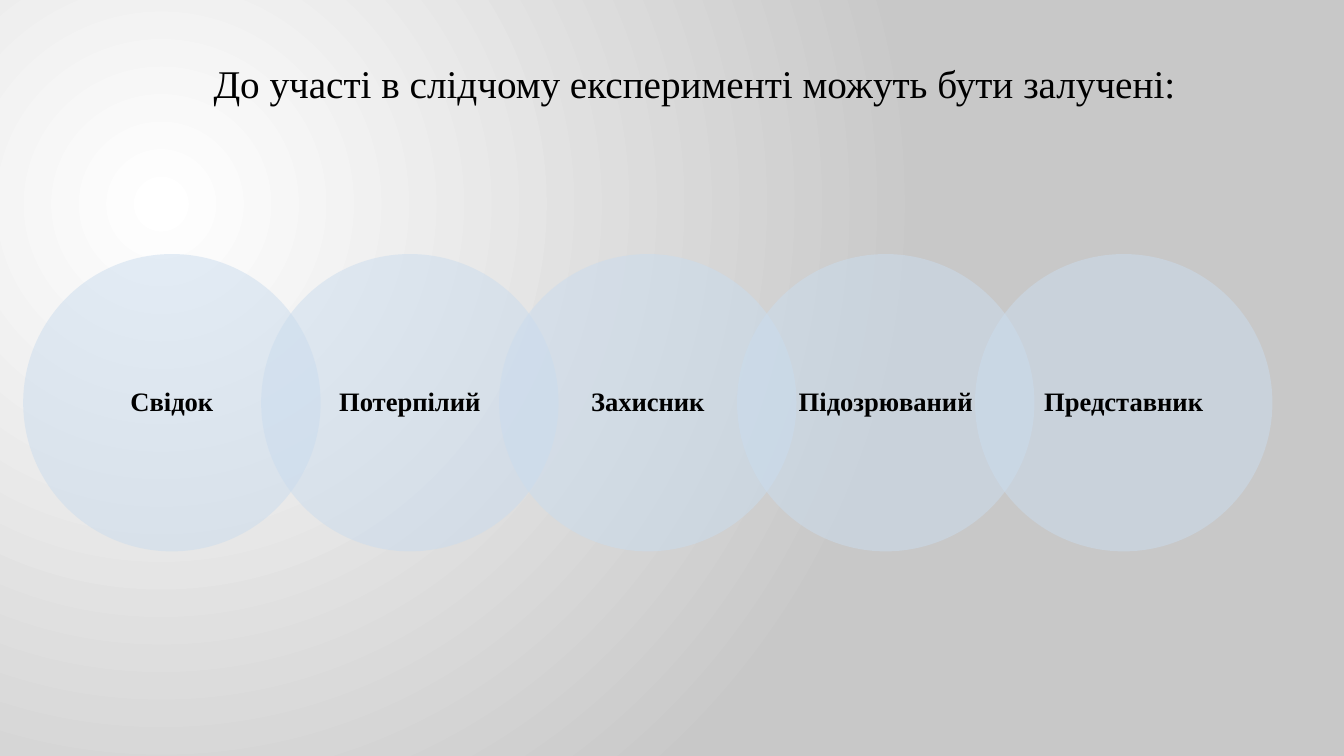
from lxml import etree
from pptx import Presentation
from pptx.dml.color import RGBColor
from pptx.enum import shapes, text
from pptx.oxml import ns
from pptx.util import Inches, Pt

BLACK = RGBColor(0x00, 0x00, 0x00)
WHITE = RGBColor(0xFF, 0xFF, 0xFF)
GREY = RGBColor(0xC8, 0xC8, 0xC8)
PALE_BLUE = RGBColor(0xCA, 0xDC, 0xEE)
FONT = "Times New Roman"

TITLE = "До участі в слідчому експерименті можуть бути залучені:"
PARTICIPANTS = ["Свідок", "Потерпілий", "Захисник", "Підозрюваний", "Представник"]
DIAMETER = 2.95
STEP = 0.8 * DIAMETER  # neighbours overlap by a fifth
FIRST_LEFT, CIRCLE_TOP = 0.23, 2.52


def set_radial_background(page, centre_color, edge_color):
    fill = page.background.fill
    fill.gradient()
    for stop, color in zip(fill.gradient_stops, (centre_color, edge_color)):
        stop.color.rgb = color
    gradient = page.element.xpath(".//p:bg//a:gradFill")[0]
    linear = gradient.find(ns.qn("a:lin"))
    radial = etree.Element(ns.qn("a:path"), {"path": "circle"})
    etree.SubElement(radial, ns.qn("a:fillToRect"),
                     {"l": "50000", "t": "55000", "r": "125000", "b": "100000"})
    gradient.replace(linear, radial)


def write(shape, words, size, bold=False, align=text.PP_ALIGN.LEFT,
          anchor=text.MSO_ANCHOR.TOP, line_spacing=1.0):
    frame = shape.text_frame
    frame.word_wrap = True
    frame.vertical_anchor = anchor
    para = frame.paragraphs[0]
    para.alignment = align
    para.line_spacing = line_spacing
    span = para.add_run()
    span.text = words
    span.font.name = FONT
    span.font.size = Pt(size)
    span.font.bold = bold
    span.font.color.rgb = BLACK


def add_title(page):
    box = page.shapes.add_textbox(Inches(2.02), Inches(0.54), Inches(9.94), Inches(1.07))
    write(box, TITLE, size=28)
    box.text_frame.paragraphs[0].space_before = Pt(10)


def add_circle(page, left, label):
    circle = page.shapes.add_shape(
        shapes.MSO_SHAPE.OVAL, Inches(left), Inches(CIRCLE_TOP),
        Inches(DIAMETER), Inches(DIAMETER))
    circle.shadow.inherit = False
    circle.line.fill.background()
    circle.fill.solid()
    circle.fill.fore_color.rgb = PALE_BLUE
    color = circle.element.spPr.find(ns.qn("a:solidFill"))[0]
    etree.SubElement(color, ns.qn("a:alpha"), {"val": "50000"})
    write(circle, label, size=19, bold=True, align=text.PP_ALIGN.CENTER,
          anchor=text.MSO_ANCHOR.MIDDLE, line_spacing=0.9)


def main():
    deck = Presentation()
    deck.slide_width, deck.slide_height = Inches(13.33), Inches(7.5)
    page = deck.slides.add_slide(deck.slide_layouts[6])
    set_radial_background(page, WHITE, GREY)
    add_title(page)
    for index, label in enumerate(PARTICIPANTS):
        add_circle(page, FIRST_LEFT + index * STEP, label)
    deck.save("out.pptx")


if __name__ == "__main__":
    main()
